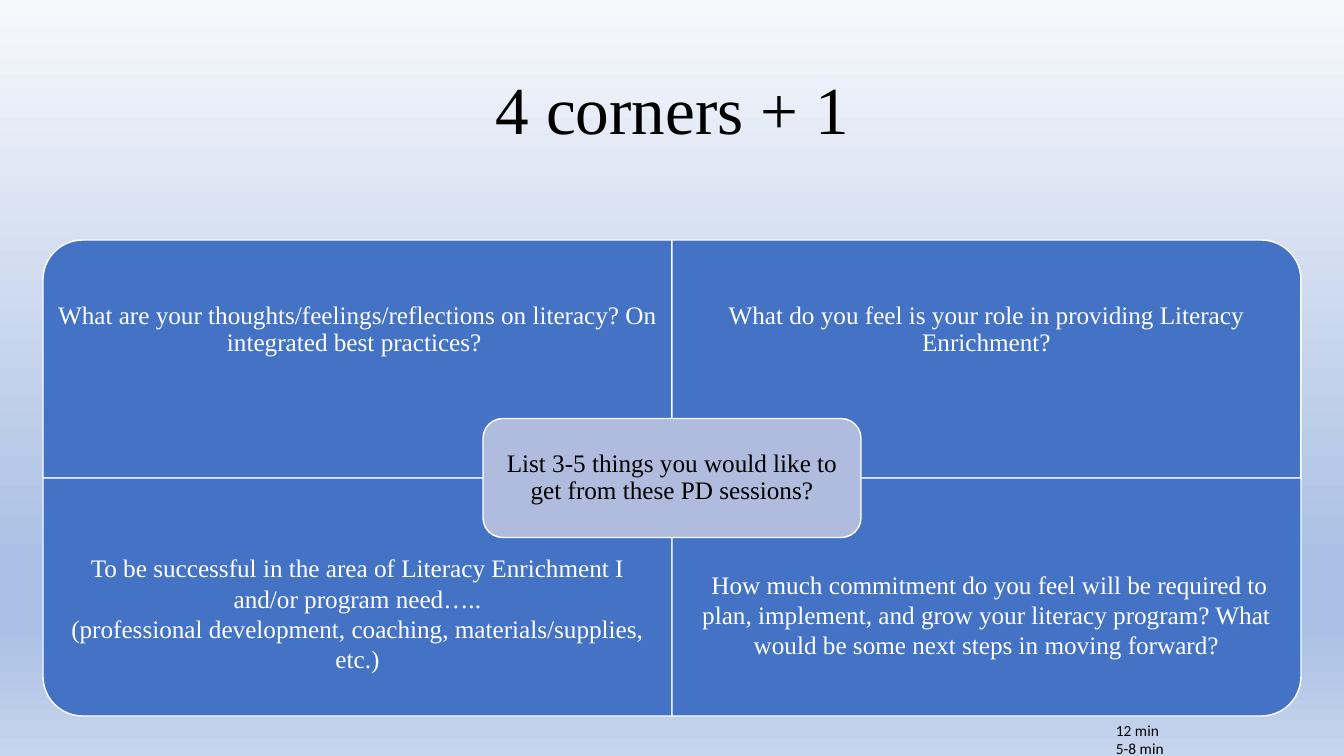
import copy

import pptx
import pptx.dml.color
import pptx.enum.shapes
import pptx.enum.text
import pptx.oxml.ns
import pptx.util

RGBColor = pptx.dml.color.RGBColor
MSO_SHAPE = pptx.enum.shapes.MSO_SHAPE
PP_ALIGN = pptx.enum.text.PP_ALIGN

BLACK = RGBColor(0x00, 0x00, 0x00)
WHITE = RGBColor(0xFF, 0xFF, 0xFF)
BLUE = RGBColor(0x44, 0x72, 0xC4)
LAVENDER = RGBColor(0xB0, 0xBC, 0xDE)
BACKGROUND_STOPS = [
    (0, RGBColor(0xF6, 0xF8, 0xFC)),
    (0.74, RGBColor(0xAB, 0xC0, 0xE4)),
    (0.83, RGBColor(0xAB, 0xC0, 0xE4)),
    (1, RGBColor(0xC7, 0xD5, 0xED)),
]
SERIF = "Times New Roman"

TITLE = "4 corners + 1"
# column, row, rotation, line spacing, bottom inset in px, paragraphs
CORNERS = [
    (0, 0, 270, 0.9, 14, ["What are your thoughts/feelings/reflections on literacy? On integrated best practices? "]),
    (1, 0, 0, 0.9, 14, ["What do you feel is your role in providing Literacy Enrichment?"]),
    (0, 1, 180, 1, 41, [
        "To be successful in the area of Literacy Enrichment I and/or program need…..",
        "(professional development, coaching, materials/supplies, etc.)",
    ]),
    (1, 1, 90, 1, 38, [
        " How much commitment do you feel will be required to plan, implement, and grow "
        "your literacy program? What would be some next steps in moving forward?",
    ]),
]
CENTER = ["List 3-5 things you would like to get from these PD sessions?"]
TIMINGS = ["12 min", "5-8 min"]

GRID_LEFT, GRID_TOP = 43, 240
PANEL_WIDTH, PANEL_HEIGHT = 629, 238
TEXT_HEIGHT = 179
CENTER_WIDTH, CENTER_HEIGHT = 378, 119


def px(length):
    return pptx.util.Emu(round(length * 914400 / 100.8))


def write(frame, lines, size, color, font=SERIF, align=PP_ALIGN.CENTER, spacing=1):
    frame.word_wrap = True
    for index, line in enumerate(lines):
        para = frame.add_paragraph() if index else frame.paragraphs[0]
        para.text = line
        para.alignment = align
        para.line_spacing = spacing
        para.font.name = font
        para.font.size = pptx.util.Pt(size)
        para.font.color.rgb = color


def set_insets(frame, side, bottom):
    frame.margin_left = frame.margin_right = frame.margin_top = px(side)
    frame.margin_bottom = px(bottom)
    frame.vertical_anchor = pptx.enum.text.MSO_ANCHOR.MIDDLE


def add_panel(slide, kind, center_x, center_y, width, height, fill):
    panel = slide.shapes.add_shape(
        kind, px(center_x - width / 2), px(center_y - height / 2), px(width), px(height))
    panel.shadow.inherit = False
    panel.fill.solid()
    panel.fill.fore_color.rgb = fill
    panel.line.color.rgb = WHITE
    panel.line.width = pptx.util.Pt(1)
    return panel


def paint_background(slide):
    fill = slide.background.fill
    fill.gradient()
    fill.gradient_angle = 270
    stop_list = slide.element.find(".//" + pptx.oxml.ns.qn("a:gsLst"))
    for stop in list(stop_list):
        stop_list.append(copy.deepcopy(stop))
    for stop, (position, color) in zip(fill.gradient_stops, BACKGROUND_STOPS):
        stop.position = position
        stop.color.rgb = color


def add_corner(slide, column, row, rotation, spacing, bottom_inset, lines):
    left = GRID_LEFT + column * PANEL_WIDTH
    top = GRID_TOP + row * PANEL_HEIGHT
    size = (PANEL_HEIGHT, PANEL_WIDTH) if rotation % 180 else (PANEL_WIDTH, PANEL_HEIGHT)
    panel = add_panel(slide, MSO_SHAPE.ROUND_1_RECTANGLE,
                      left + PANEL_WIDTH / 2, top + PANEL_HEIGHT / 2, *size, BLUE)
    panel.rotation = rotation
    text_top = top + row * (PANEL_HEIGHT - TEXT_HEIGHT)
    box = slide.shapes.add_textbox(px(left), px(text_top), px(PANEL_WIDTH), px(TEXT_HEIGHT))
    set_insets(box.text_frame, 14, bottom_inset)
    write(box.text_frame, lines, 18, WHITE, spacing=spacing)


def main():
    deck = pptx.Presentation()
    deck.slide_width, deck.slide_height = px(1344), px(756)
    slide = deck.slides.add_slide(deck.slide_layouts[5])
    paint_background(slide)

    title = slide.shapes.title
    title.left, title.top, title.width, title.height = px(93), px(40), px(1159), px(146)
    title.text_frame.auto_size = pptx.enum.text.MSO_AUTO_SIZE.NONE
    title.text_frame.vertical_anchor = pptx.enum.text.MSO_ANCHOR.MIDDLE
    write(title.text_frame, [TITLE], 48, BLACK, spacing=0.9)

    for corner in CORNERS:
        add_corner(slide, *corner)

    center = add_panel(slide, MSO_SHAPE.ROUNDED_RECTANGLE, GRID_LEFT + PANEL_WIDTH,
                       GRID_TOP + PANEL_HEIGHT, CENTER_WIDTH, CENTER_HEIGHT, LAVENDER)
    set_insets(center.text_frame, 7, 7)
    write(center.text_frame, CENTER, 18, BLACK, spacing=0.9)

    timings = slide.shapes.add_textbox(px(1106), px(716), px(213), px(47))
    write(timings.text_frame, TIMINGS, 11, BLACK, "Calibri", PP_ALIGN.LEFT)
    timings.text_frame.auto_size = pptx.enum.text.MSO_AUTO_SIZE.SHAPE_TO_FIT_TEXT

    deck.save("out.pptx")


if __name__ == "__main__":
    main()
